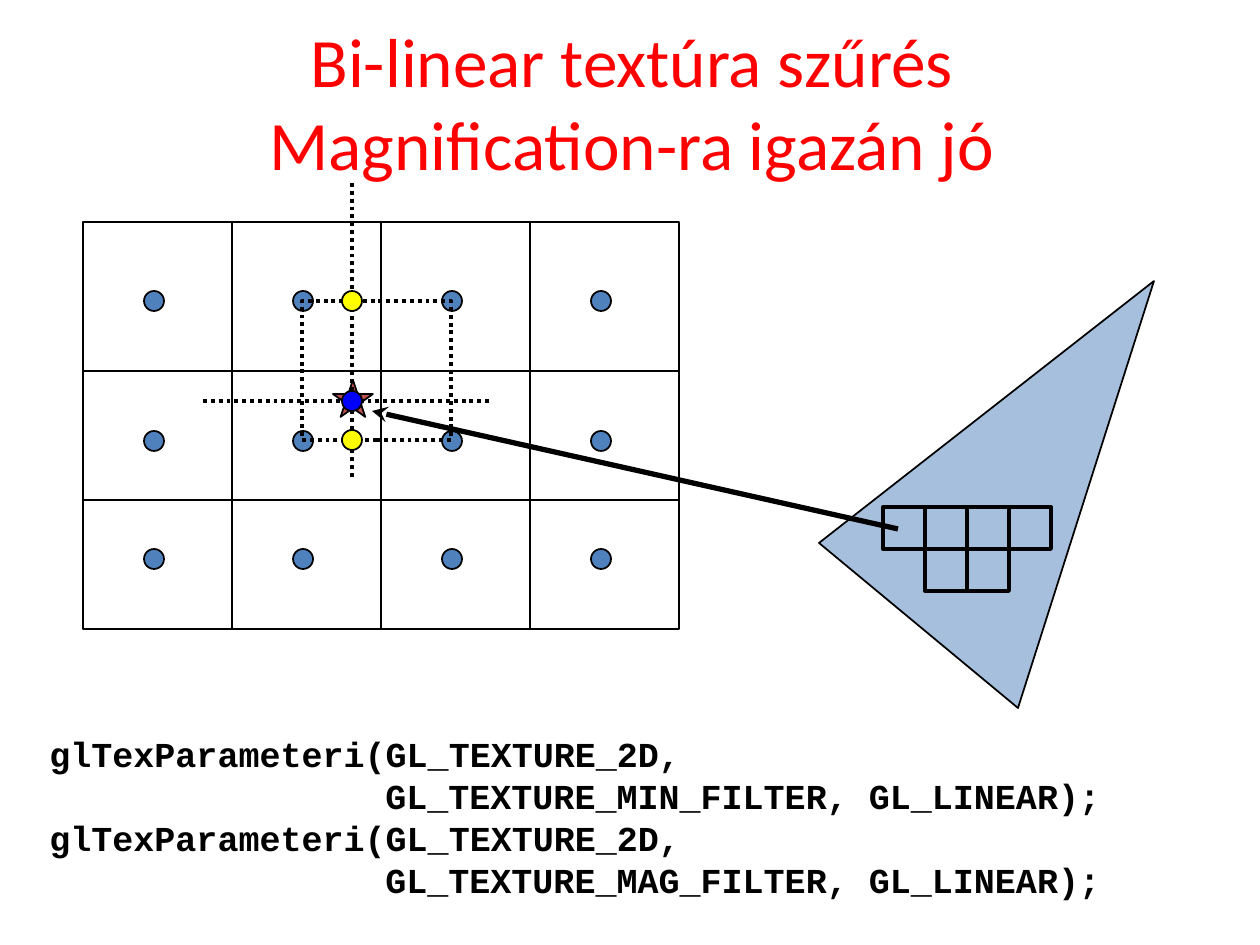
from dataclasses import dataclass
from typing import NamedTuple, Optional

from lxml import etree
from pptx import Presentation
from pptx import util as u
from pptx.dml.color import RGBColor
from pptx.enum import dml, shapes, text
from pptx.oxml.ns import qn

EMU_PER_PX = 914400 / 126


@dataclass(frozen=True)
class Theme:
    black: str = "000000"
    title: str = "FF0000"
    texel: str = "4F81BD"
    star: str = "C0504D"
    blend: str = "FFFF01"
    sample: str = "0000FF"
    title_font: str = "Calibri"
    code_font: str = "Courier New"
    title_size: float = 39.6
    code_size: float = 20
    thin: float = 1
    medium: float = 2.25
    thick: float = 3


class Box(NamedTuple):
    left: int
    top: int
    width: int
    height: int


class Segment(NamedTuple):
    x1: int
    y1: int
    x2: int
    y2: int


class CodeLine(NamedTuple):
    words: str
    indent: int


THEME = Theme()
SHAPE = shapes.MSO_SHAPE

# Texel grid
COLUMN_LEFT, COLUMN_PITCH, COLUMN_COUNT = 83, 149, 4
COLUMN_TOP, COLUMN_HEIGHT = 222, 407
MIDDLE_ROW = Box(COLUMN_LEFT, 371, COLUMN_PITCH * COLUMN_COUNT, 129)
DOT = 20
DOT_X, DOT_ROWS = 154, (441, 559, 301)

# Sample point and its neighbourhood
SAMPLE_X, SAMPLE_Y = 352, 401
STAR = Box(333, 380, 40, 37)
NEIGHBOURS = Box(302, 301, COLUMN_PITCH, 139)
AXES = (Segment(SAMPLE_X, 183, SAMPLE_X, 480), Segment(203, SAMPLE_Y, 491, SAMPLE_Y))
LOOKUP = Segment(898, 529, 372, 411)

# Triangle and its pixels, as (column, row)
TRIANGLE = ((1018, 708), (819, 543), (1154, 281))
PIXEL_LEFT, PIXEL_TOP, PIXEL = 883, 507, 42
PIXELS = ((0, 0), (1, 0), (2, 0), (3, 0), (1, 1), (2, 1))

TITLE_BOX = Box(32, 23, 1200, 157)
TITLE = "Bi-linear textúra szűrés\vMagnification-ra igazán jó"
CODE_BOX = Box(37, 726, 1221, 183)
CODE = (
    CodeLine("glTexParameteri(GL_TEXTURE_2D,", 0),
    CodeLine("GL_TEXTURE_MIN_FILTER, GL_LINEAR);", 336),
    CodeLine("glTexParameteri(GL_TEXTURE_2D,", 0),
    CodeLine("GL_TEXTURE_MAG_FILTER, GL_LINEAR);", 336),
)


def px(length: float) -> u.Emu:
    return u.Emu(round(length * EMU_PER_PX))


def style_line(line, width: float, dotted: bool = False) -> None:
    line.color.rgb = RGBColor.from_string(THEME.black)
    line.width = u.Pt(width)
    if dotted:
        line.dash_style = dml.MSO_LINE.ROUND_DOT


def style_shape(shape, fill: Optional[str], width: float, dotted: bool = False) -> None:
    shape.shadow.inherit = False
    if fill is None:
        shape.fill.background()
    else:
        shape.fill.solid()
        shape.fill.fore_color.rgb = RGBColor.from_string(fill)
    style_line(shape.line, width, dotted)


def add_figure(slide, kind, box: Box, fill: Optional[str] = None,
               width: float = THEME.thin, dotted: bool = False) -> None:
    shape = slide.shapes.add_shape(kind, *map(px, box))
    style_shape(shape, fill, width, dotted)


def add_dot(slide, x: int, y: int, fill: str) -> None:
    add_figure(slide, SHAPE.OVAL, Box(x - DOT // 2, y - DOT // 2, DOT, DOT), fill)


def add_line(slide, segment: Segment, width: float, dotted: bool = False,
             arrow: bool = False) -> None:
    connector = slide.shapes.add_connector(shapes.MSO_CONNECTOR.STRAIGHT, *map(px, segment))
    style_line(connector.line, width, dotted)
    properties = connector._element.spPr
    if arrow:
        etree.SubElement(properties.find(qn("a:ln")), qn("a:tailEnd"), type="stealth")
    etree.SubElement(properties, qn("a:effectLst"))


def add_triangle(slide) -> None:
    builder = slide.shapes.build_freeform(*TRIANGLE[0], scale=EMU_PER_PX)
    builder.add_line_segments(TRIANGLE[1:], close=True)
    shape = builder.convert_to_shape()
    style_shape(shape, THEME.texel, THEME.thin)
    color = shape._element.spPr.find(qn("a:solidFill"))[0]
    etree.SubElement(color, qn("a:alpha"), val="50000")


def add_frame(slide, box: Box):
    frame = slide.shapes.add_textbox(*map(px, box)).text_frame
    frame.word_wrap = True
    return frame


def set_font(paragraph, name: str, size: float, color: str, bold: bool = False) -> None:
    font = paragraph.font
    font.name, font.size, font.bold = name, u.Pt(size), bold
    font.color.rgb = RGBColor.from_string(color)


def add_title(slide) -> None:
    frame = add_frame(slide, TITLE_BOX)
    frame.vertical_anchor = text.MSO_ANCHOR.MIDDLE
    paragraph = frame.paragraphs[0]
    paragraph.text = TITLE
    paragraph.alignment = text.PP_ALIGN.CENTER
    set_font(paragraph, THEME.title_font, THEME.title_size, THEME.title)


def add_code(slide) -> None:
    frame = add_frame(slide, CODE_BOX)
    for index, line in enumerate(CODE):
        paragraph = frame.add_paragraph() if index else frame.paragraphs[0]
        paragraph.text = line.words
        set_font(paragraph, THEME.code_font, THEME.code_size, THEME.black, bold=True)
        paragraph._p.get_or_add_pPr().set("marL", str(px(line.indent)))


def main() -> None:
    presentation = Presentation()
    presentation.slide_width, presentation.slide_height = px(1260), px(945)
    slide = presentation.slides.add_slide(presentation.slide_layouts[6])
    add_title(slide)

    # Texels and their centres
    for column in range(COLUMN_COUNT):
        left = COLUMN_LEFT + column * COLUMN_PITCH
        add_figure(slide, SHAPE.RECTANGLE, Box(left, COLUMN_TOP, COLUMN_PITCH, COLUMN_HEIGHT))
    add_figure(slide, SHAPE.RECTANGLE, MIDDLE_ROW)
    for y in DOT_ROWS:
        for column in range(COLUMN_COUNT):
            add_dot(slide, DOT_X + column * COLUMN_PITCH, y, THEME.texel)
    add_figure(slide, SHAPE.STAR_5_POINT, STAR, THEME.star)

    add_code(slide)

    # Triangle with its pixels
    add_triangle(slide)
    for column, row in PIXELS:
        box = Box(PIXEL_LEFT + column * PIXEL, PIXEL_TOP + row * PIXEL, PIXEL, PIXEL)
        add_figure(slide, SHAPE.RECTANGLE, box, width=THEME.medium)

    # Lookup and interpolation
    add_line(slide, LOOKUP, THEME.thick, arrow=True)
    for axis in AXES:
        add_line(slide, axis, THEME.medium, dotted=True)
    add_figure(slide, SHAPE.RECTANGLE, NEIGHBOURS, width=THEME.medium, dotted=True)
    for y in (NEIGHBOURS.top, NEIGHBOURS.top + NEIGHBOURS.height):
        add_dot(slide, SAMPLE_X, y, THEME.blend)
    add_dot(slide, SAMPLE_X, SAMPLE_Y, THEME.sample)

    presentation.save("out.pptx")


if __name__ == "__main__":
    main()
